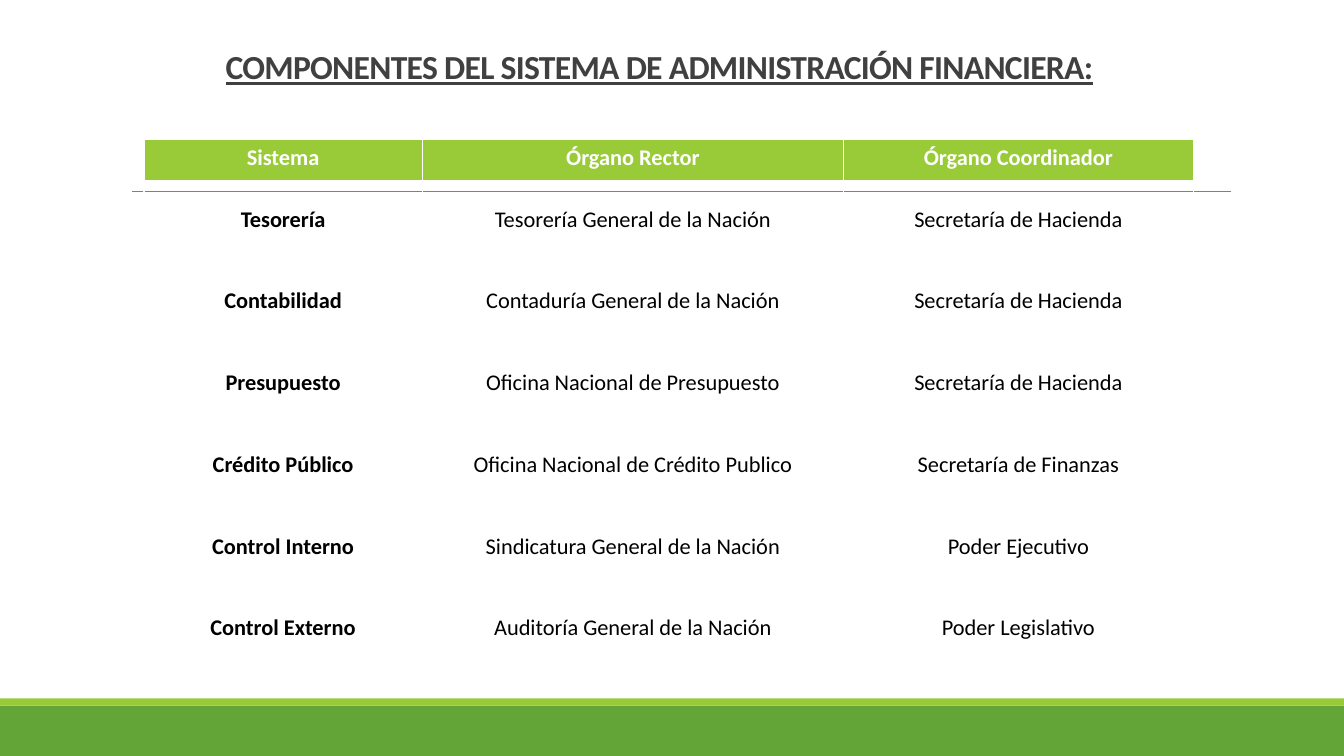
from lxml import etree
from pptx import Presentation
from pptx import util as u
from pptx.dml import color as dml
from pptx.enum import shapes, text
from pptx.oxml import ns

HEAD = ("Sistema", "Órgano Rector", "Órgano Coordinador")
ROWS = (
    ("Tesorería", "Tesorería General de la Nación", "Secretaría de Hacienda"),
    ("Contabilidad", "Contaduría General de la Nación", "Secretaría de Hacienda"),
    ("Presupuesto", "Oficina Nacional de Presupuesto", "Secretaría de Hacienda"),
    ("Crédito Público", "Oficina Nacional de Crédito Publico", "Secretaría de Finanzas"),
    ("Control Interno", "Sindicatura General de la Nación", "Poder Ejecutivo"),
    ("Control Externo", "Auditoría General de la Nación", "Poder Legislativo"),
)
WIDTHS = (7.01, 10.62, 8.81)
TOP, ROW = 1.07, 2.06
WIDE, HIGH = 33.87, 19.05
LIME, GREEN, WHITE = "99CB38", "63A537", "FFFFFF"


def paint(item, tone):
    item.rgb = dml.RGBColor.from_string(tone)


def apply(item, form):
    for key, value in form.items():
        setattr(item, key, value)


def write(para, words, tone, font, form):
    apply(para, {"alignment": text.PP_ALIGN.CENTER, **form})
    run = para.add_run()
    run.text = words
    apply(run.font, {"name": "Calibri", **font})
    paint(run.font.color, tone)
    return run


def band(slide, top, high, tone):
    bar = slide.shapes.add_shape(
        shapes.MSO_SHAPE.RECTANGLE, 0, u.Cm(top), u.Cm(WIDE), u.Cm(high))
    bar.shadow.inherit = False
    bar.fill.solid()
    paint(bar.fill.fore_color, tone)
    bar.line.fill.background()


def rule(slide, left, right, top):
    line = slide.shapes.add_connector(
        shapes.MSO_CONNECTOR.STRAIGHT, u.Cm(left), u.Cm(top), u.Cm(right), u.Cm(top))
    paint(line.line.color, "808080")
    line.line.width = u.Pt(0.5)
    etree.SubElement(line._element.spPr, ns.qn("a:effectLst"))


def title(slide, words):
    box = slide.shapes.add_textbox(u.Cm(3.15), u.Cm(1.19), u.Cm(26.92), u.Cm(1.93))
    frame = box.text_frame
    apply(frame, {"word_wrap": True, "vertical_anchor": text.MSO_ANCHOR.BOTTOM,
                  "margin_top": 0, "margin_bottom": u.Cm(1)})
    font = {"size": u.Pt(24), "bold": True, "underline": True}
    run = write(frame.paragraphs[0], words, "404040", font, {"line_spacing": 0.85})
    run.font._element.set("spc", "-50")


def edge(cell, side, width):
    line = etree.SubElement(
        cell._tc.get_or_add_tcPr(), ns.qn("a:ln" + side), w=str(u.Pt(width)))
    fill = etree.SubElement(line, ns.qn("a:solidFill"))
    etree.SubElement(fill, ns.qn("a:srgbClr"), val=WHITE)


def entry(cell, words, head, bold):
    apply(cell, {"margin_left": u.Cm(0.18), "margin_right": u.Cm(0.18),
                 "margin_top": 0, "margin_bottom": 0,
                 "vertical_anchor": text.MSO_ANCHOR.MIDDLE})
    for side in "LRTB":
        edge(cell, side, 3 if head and side == "B" else 1)
    if head:
        cell.fill.solid()
        paint(cell.fill.fore_color, LIME)
    else:
        cell.fill.background()
    write(cell.text_frame.paragraphs[0], words, WHITE if head else "000000",
          {"size": u.Pt(16), "bold": bold},
          {"line_spacing": u.Pt(15), "space_before": u.Pt(3), "space_after": u.Pt(5)})


def grid(slide):
    rows = (HEAD,) + ROWS
    table = slide.shapes.add_table(
        len(rows), len(HEAD), u.Cm(3.63), u.Cm(3.51),
        u.Cm(sum(WIDTHS)), u.Cm(TOP + ROW * len(ROWS))).table
    table.horz_banding = False
    for col, width in zip(table.columns, WIDTHS):
        col.width = u.Cm(width)
    for r, row in enumerate(rows):
        table.rows[r].height = u.Cm(ROW if r else TOP)
        for c, words in enumerate(row):
            entry(table.cell(r, c), words, r == 0, r == 0 or c == 0)


def main():
    deck = Presentation()
    apply(deck, {"slide_width": u.Cm(WIDE), "slide_height": u.Cm(HIGH)})
    slide = deck.slides.add_slide(deck.slide_layouts[6])
    band(slide, 17.78, 1.27, GREEN)
    band(slide, 17.6, 0.18, LIME)
    rule(slide, 3.33, 31.01, 4.83)
    title(slide, "COMPONENTES DEL SISTEMA DE ADMINISTRACIÓN FINANCIERA:")
    grid(slide)
    deck.save("out.pptx")


if __name__ == "__main__":
    main()
